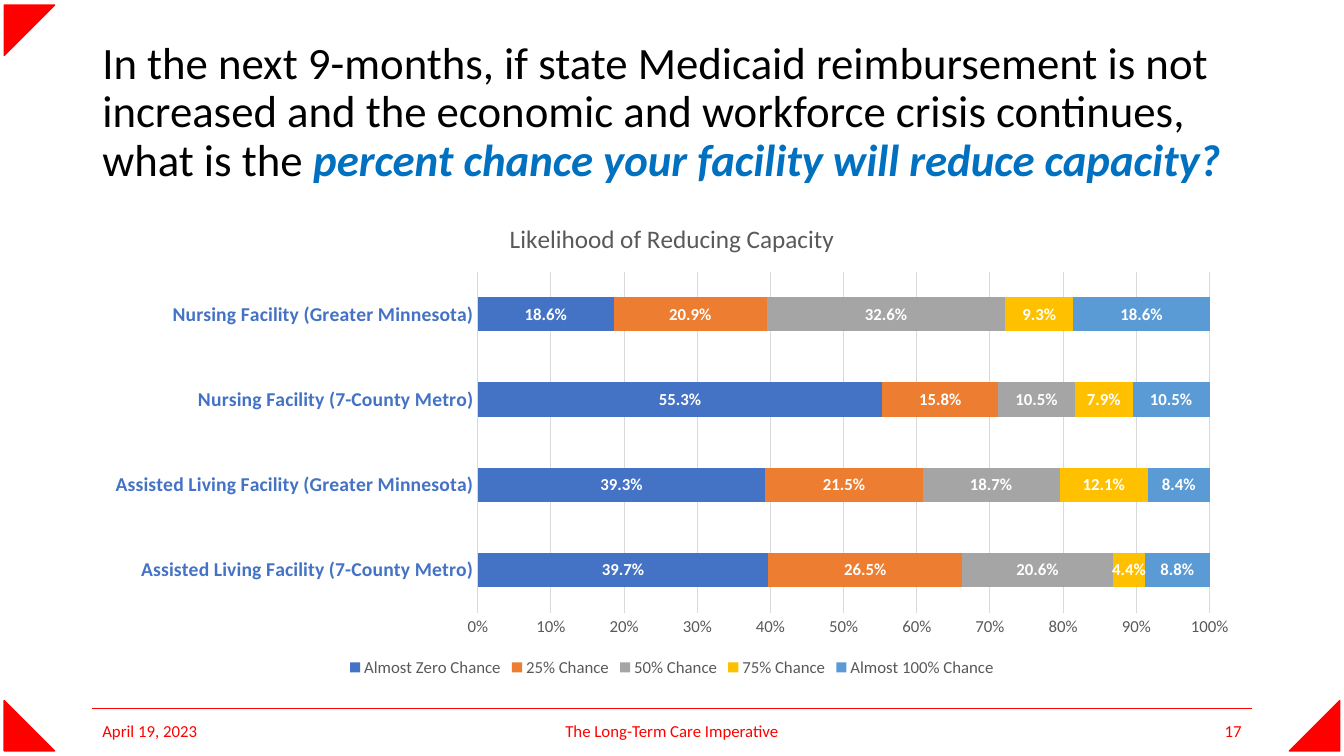
from lxml.etree import SubElement
from pptx import Presentation
from pptx.chart.data import CategoryChartData as ChartData
from pptx.dml.color import RGBColor as RGB
from pptx.enum.chart import XL_CHART_TYPE as Chart, XL_LEGEND_POSITION as Legend, XL_TICK_MARK as Tick
from pptx.enum.shapes import MSO_CONNECTOR as Link, MSO_SHAPE as Shape
from pptx.enum.text import MSO_ANCHOR as Anchor, PP_ALIGN as Align
from pptx.oxml.ns import qn
from pptx.util import Pt

COLORS = {
    "red": "FF0000", "black": "000000", "white": "FFFFFF", "title": "0070C0",
    "text": "595959", "grid": "D9D9D9", "blue": "4472C4", "orange": "ED7D31",
    "gray": "A5A5A5", "gold": "FFC000", "sky": "5B9BD5",
}
LEFT, WIDTH = 66, 828


def tint(name):
    return RGB.from_string(COLORS[name])


def write(text, box=None, para=None, size=12, color="red", align=Align.LEFT, bold=False, space=1.0):
    if para is None:
        frame = slide.shapes.add_textbox(*map(Pt, box)).text_frame
        frame.word_wrap = True
        frame.vertical_anchor = Anchor.MIDDLE
        para = frame.paragraphs[0]
        para.alignment = align
        para.line_spacing = space
    run = para.add_run()
    run.text = text
    font = run.font
    font.name, font.size, font.bold, font.italic = "Calibri", Pt(size), bold, bold
    font.color.rgb = tint(color)
    return para


deck = Presentation()
deck.slide_width, deck.slide_height = Pt(960), Pt(540)
slide = deck.slides.add_slide(deck.slide_layouts[6])

for x, y, turn in [(3, 3.6, 90), (921, 500.4, 270), (3, 500.4, 0)]:
    corner = slide.shapes.add_shape(Shape.RIGHT_TRIANGLE, Pt(x), Pt(y), Pt(36), Pt(36))
    corner.rotation = turn
    corner.shadow.inherit = False
    corner.fill.solid()
    corner.fill.fore_color.rgb = tint("red")
    corner.line.color.rgb = tint("red")
    corner.line.width = Pt(1)

rule = slide.shapes.add_connector(Link.STRAIGHT, Pt(LEFT), Pt(506), Pt(LEFT + WIDTH), Pt(506))
rule.line.color.rgb = tint("red")
rule.line.width = Pt(0.5)
SubElement(rule._element.spPr, qn("a:effectLst"))

title = write(
    "In the next 9-months, if state Medicaid reimbursement is not increased and "
    "the economic and workforce crisis continues, what is the ",
    box=(LEFT, 28.75, WIDTH, 104.4), size=32, color="black", space=0.9)
write("percent chance your facility will reduce capacity?", para=title, size=32, color="title", bold=True)

for text, x, width, align in [
    ("April 19, 2023", LEFT, 216, Align.LEFT),
    ("The Long-Term Care Imperative", 318, 324, Align.CENTER),
    ("17", 678, 216, Align.RIGHT),
]:
    write(text, box=(x, 507.5, width, 28.75), align=align)

data = ChartData(number_format="0.0%")
data.categories = [
    "Assisted Living Facility (7-County Metro)",
    "Assisted Living Facility (Greater Minnesota)",
    "Nursing Facility (7-County Metro)",
    "Nursing Facility (Greater Minnesota)",
]
chances = [
    ("Almost Zero Chance", "blue", (0.397, 0.393, 0.553, 0.186)),
    ("25% Chance", "orange", (0.265, 0.215, 0.158, 0.209)),
    ("50% Chance", "gray", (0.206, 0.187, 0.105, 0.326)),
    ("75% Chance", "gold", (0.044, 0.121, 0.079, 0.093)),
    ("Almost 100% Chance", "sky", (0.088, 0.084, 0.105, 0.186)),
]
for name, color, values in chances:
    data.add_series(name, values)

chart = slide.shapes.add_chart(
    Chart.BAR_STACKED_100, Pt(LEFT), Pt(144), Pt(WIDTH), Pt(342.75), data).chart
chart.font.name, chart.font.size = "Calibri", Pt(10)
chart.has_title = True
write("Likelihood of Reducing Capacity", para=chart.chart_title.text_frame.paragraphs[0],
      size=18, color="text")
chart.chart_title.include_in_layout = False
chart.has_legend = True
chart.legend.position = Legend.BOTTOM
chart.legend.include_in_layout = False

plot = chart.plots[0]
plot.gap_width, plot.overlap, plot.vary_by_categories = 150, 100, False
fonts = [(chart.legend.font, 12, "text", False),
         (chart.category_axis.tick_labels.font, 14, "blue", True),
         (chart.value_axis.tick_labels.font, 12, "text", False)]
for series, (name, color, values) in zip(plot.series, chances):
    series.format.fill.solid()
    series.format.fill.fore_color.rgb = tint(color)
    series.invert_if_negative = False
    labels = series.data_labels
    labels.show_value = True
    labels.number_format, labels.number_format_is_linked = "0.0%", False
    fonts.append((labels.font, 12, "white", True))
for font, size, color, bold in fonts:
    font.name, font.size, font.bold = "Calibri", Pt(size), bold
    font.color.rgb = tint(color)

for axis in (chart.category_axis, chart.value_axis):
    axis.major_tick_mark = axis.minor_tick_mark = Tick.NONE
rows, scale = chart.category_axis, chart.value_axis
scale.has_major_gridlines = True
for line in (rows.format.line, scale.major_gridlines.format.line):
    line.color.rgb = tint("grid")
    line.width = Pt(0.75)
scale.format.line.fill.background()
scale.tick_labels.number_format = "0%"
scale.tick_labels.number_format_is_linked = False

deck.save("out.pptx")
